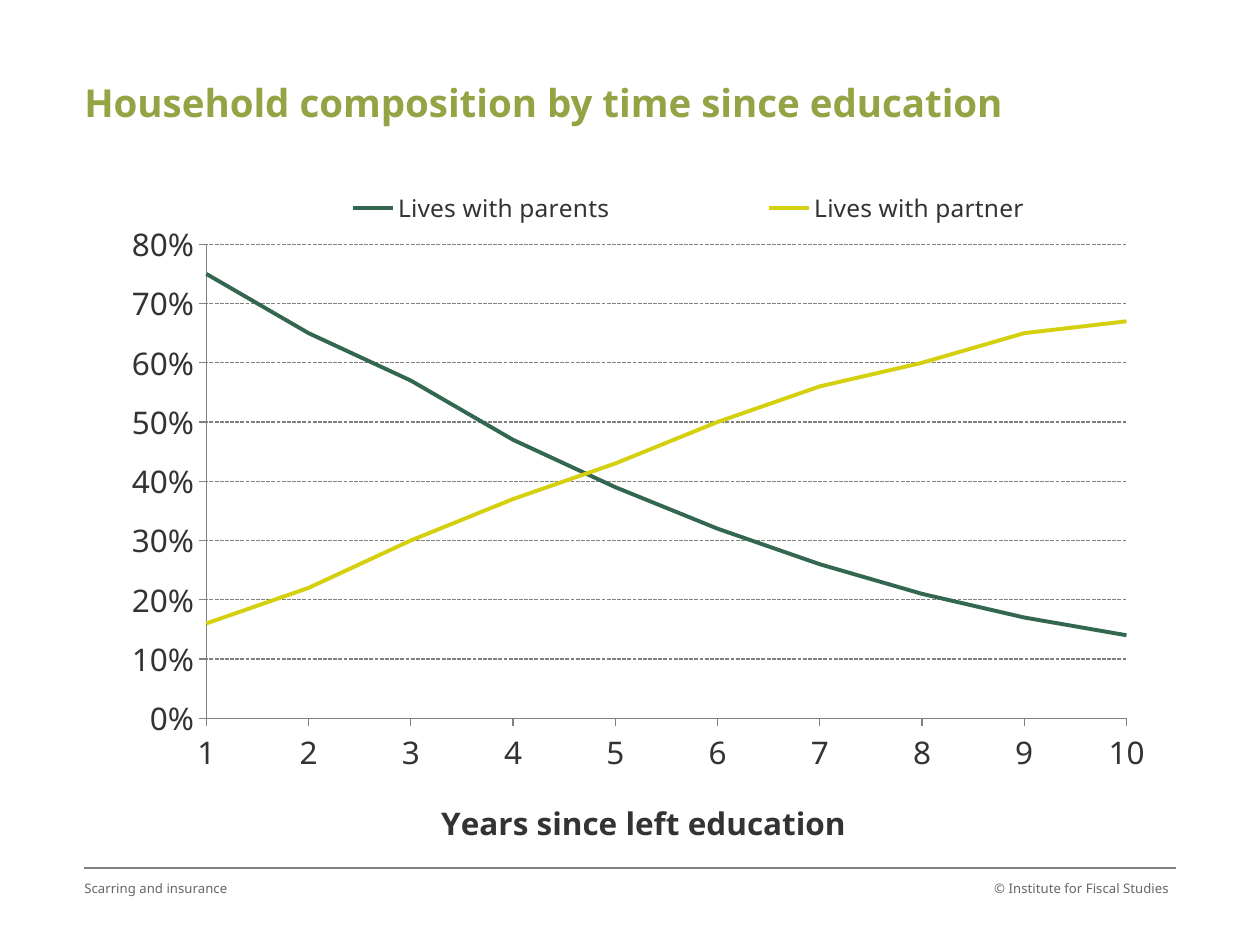
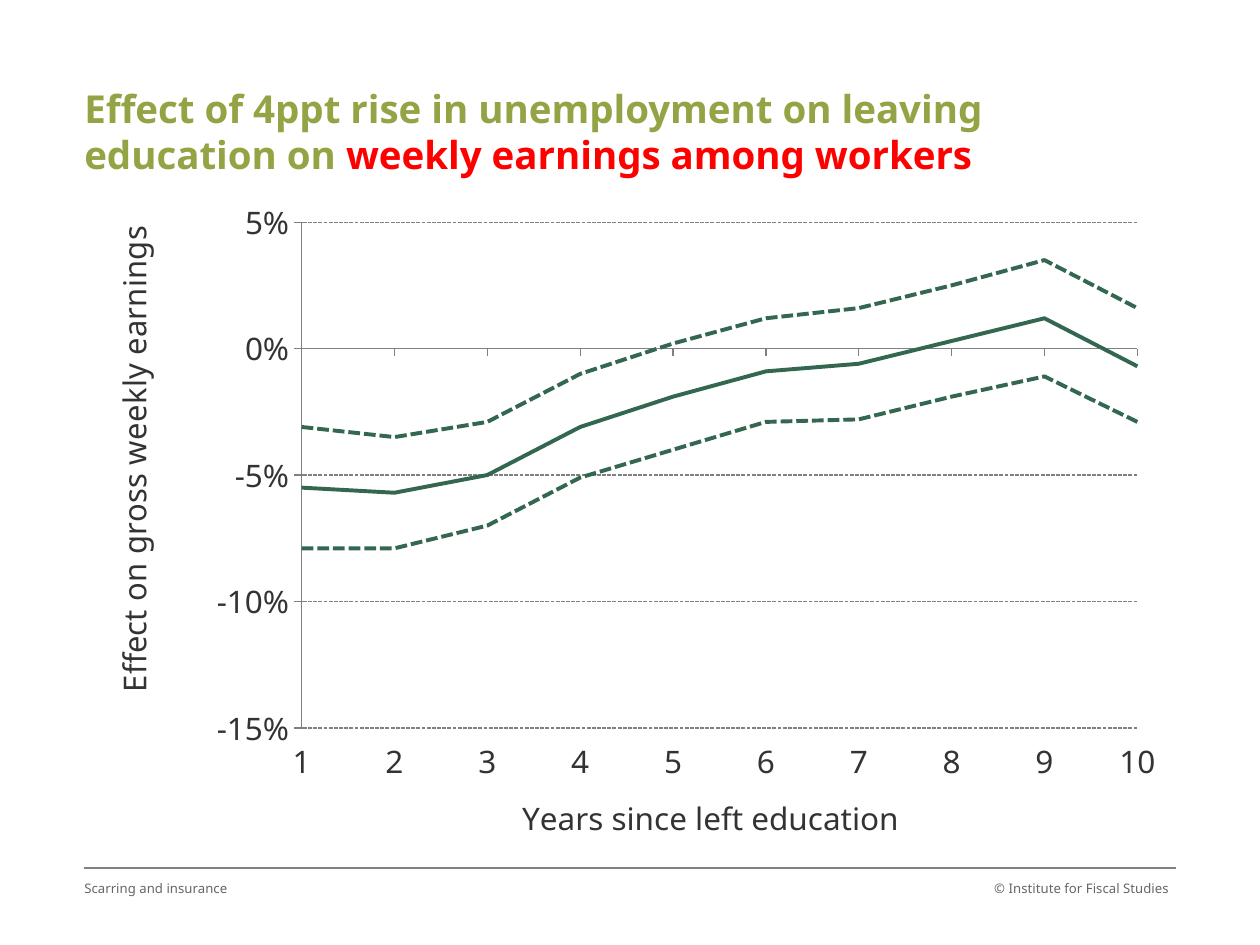
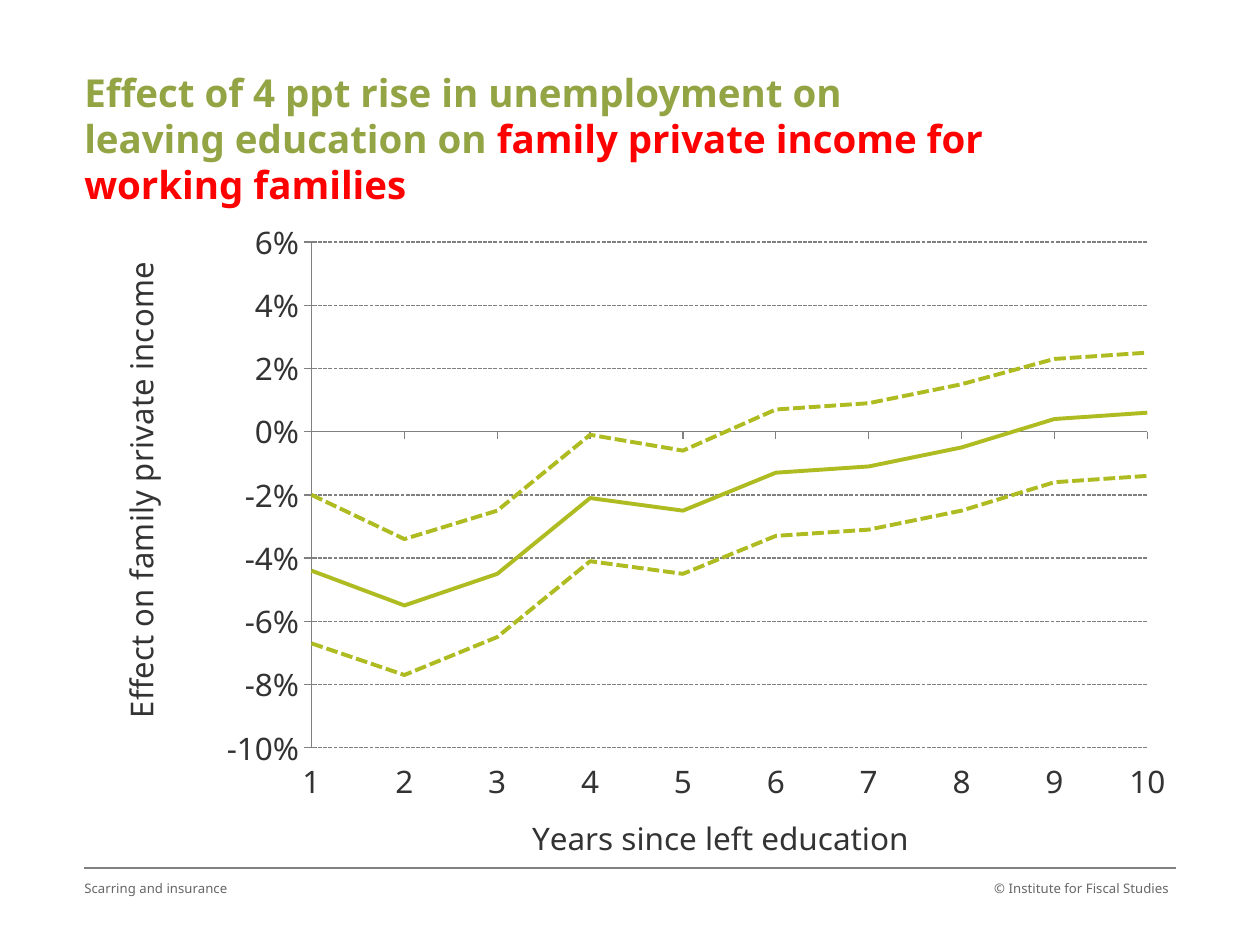
from dataclasses import dataclass
from typing import Optional

from lxml.etree import SubElement
from pptx import Presentation
from pptx.chart.data import CategoryChartData
from pptx.dml.color import RGBColor
from pptx.enum.chart import XL_CHART_TYPE as ChartType
from pptx.enum.chart import XL_LEGEND_POSITION as LegendPosition
from pptx.enum.chart import XL_TICK_LABEL_POSITION as LabelPosition
from pptx.enum.chart import XL_TICK_MARK as TickMark
from pptx.enum.dml import MSO_LINE_DASH_STYLE as Dash
from pptx.enum.shapes import MSO_CONNECTOR_TYPE as ConnectorType
from pptx.enum.text import PP_ALIGN as Align
from pptx.oxml import parse_xml
from pptx.oxml.ns import nsdecls, qn
from pptx.util import Cm, Pt

TITLE_GREEN = RGBColor(0x93, 0xA4, 0x45)
RED = RGBColor(0xFF, 0x00, 0x00)
FOOTER_GRAY = RGBColor(0x66, 0x66, 0x66)
LINE_GRAY = RGBColor(0x80, 0x80, 0x80)
TEXT_GRAY = RGBColor(0x33, 0x33, 0x33)
DARK_GREEN = RGBColor(0x33, 0x67, 0x50)
YELLOW = RGBColor(0xD4, 0xD0, 0x0E)
LIME = RGBColor(0xAF, 0xBC, 0x21)
FONT = "Noto Sans"
LEFT, RIGHT = 1.7, 23.7
YEARS = [str(year) for year in range(1, 11)]


@dataclass(frozen=True)
class Box:
    """A place in centimetres; a box without size only fixes its corner."""

    left: float
    top: float
    width: float = 0
    height: float = 0


@dataclass(frozen=True)
class Series:
    """One line of a chart, with its values in percent."""

    name: str
    color: RGBColor
    percents: list[float]
    dashed: bool = False


@dataclass(frozen=True)
class ChartSlide:
    """A slide with a title and one line chart; inner boxes are relative to the chart."""

    title: str
    title_box: Box
    chart_box: Box
    plot_box: Box
    years_title: Box
    series: list[Series]
    scale: tuple[float, float, float]
    highlight: str = ""
    value_title: str = ""
    value_title_box: Optional[Box] = None
    legend_box: Optional[Box] = None


def estimate_with_bounds(color: RGBColor, *rows: list[float]) -> list[Series]:
    """Return a solid central line followed by dashed bounds."""
    return [Series(f"Series {number}", color, row, number > 1)
            for number, row in enumerate(rows, 1)]


EFFECT_PLOT = Box(4.58, 1.17, 16.85, 10.37)
EFFECT_YEARS_TITLE = Box(8.91, 12.77)

SLIDES = [
    ChartSlide(
        title="Household composition by time since education",
        title_box=Box(LEFT, 1.52, 19, 1.12),
        chart_box=Box(LEFT, 3.53, 22, 13.69),
        plot_box=Box(2.46, 1.41, 18.55, 9.65),
        years_title=Box(7.08, 12.57),
        series=[
            Series("Lives with parents", DARK_GREEN, [75, 65, 57, 47, 39, 32, 26, 21, 17, 14]),
            Series("Lives with partner", YELLOW, [16, 22, 30, 37, 43, 50, 56, 60, 65, 67]),
        ],
        scale=(0, 80, 10),
        legend_box=Box(2.37, 0.2, 19.8, 0.95),
    ),
    ChartSlide(
        title="Effect of 4ppt rise in unemployment on leaving education on ",
        highlight="weekly earnings among workers",
        title_box=Box(LEFT, 1.65, 18.21, 1.12),
        chart_box=Box(1.5, 3.33, 22, 13.79),
        plot_box=EFFECT_PLOT,
        years_title=EFFECT_YEARS_TITLE,
        series=estimate_with_bounds(
            DARK_GREEN,
            [-5.5, -5.7, -5, -3.1, -1.9, -0.9, -0.6, 0.3, 1.2, -0.7],
            [-3.1, -3.5, -2.9, -1, 0.2, 1.2, 1.6, 2.5, 3.5, 1.6],
            [-7.9, -7.9, -7, -5.1, -4, -2.9, -2.8, -1.9, -1.1, -2.9],
        ),
        scale=(-15, 5, 5),
        value_title="Effect on gross weekly earnings",
        value_title_box=Box(0.57, 1.27),
    ),
    ChartSlide(
        title="Effect of 4 ppt rise in unemployment on leaving education on ",
        highlight="family private income for working families",
        title_box=Box(LEFT, 1.32, 18.21, 1.12),
        chart_box=Box(LEFT, 3.73, 22, 13.79),
        plot_box=EFFECT_PLOT,
        years_title=EFFECT_YEARS_TITLE,
        series=estimate_with_bounds(
            LIME,
            [-4.4, -5.5, -4.5, -2.1, -2.5, -1.3, -1.1, -0.5, 0.4, 0.6],
            [-2, -3.4, -2.5, -0.1, -0.6, 0.7, 0.9, 1.5, 2.3, 2.5],
            [-6.7, -7.7, -6.5, -4.1, -4.5, -3.3, -3.1, -2.5, -1.6, -1.4],
        ),
        scale=(-10, 6, 2),
        value_title="Effect on family private income",
        value_title_box=Box(0.51, 1.6),
    ),
]


def lengths(box: Box) -> tuple:
    """Return the box as left, top, width and height lengths."""
    return Cm(box.left), Cm(box.top), Cm(box.width), Cm(box.height)


def set_font(font, size: float, color: RGBColor, bold: bool = False) -> None:
    """Give a font the shared typeface with this size and colour."""
    font.name, font.size, font.bold = FONT, Pt(size), bold
    font.color.rgb = color


def add_text(slide, box: Box, text: str, *, size: float, color: RGBColor, bold: bool = False,
             highlight: str = "", align=Align.LEFT, line_spacing=None,
             top_inset: float = 0, right_inset: float = 0) -> None:
    """Add a one-paragraph text box, optionally ending in a red highlight."""
    frame = slide.shapes.add_textbox(*lengths(box)).text_frame
    frame.word_wrap = True
    frame.margin_left = frame.margin_bottom = 0
    frame.margin_top, frame.margin_right = Cm(top_inset), Cm(right_inset)
    paragraph = frame.paragraphs[0]
    paragraph.alignment, paragraph.line_spacing = align, line_spacing
    for words, run_color in ((text, color), (highlight, RED)):
        if words:
            run = paragraph.add_run()
            run.text = words
            set_font(run.font, size, run_color, bold)


def add_rule(slide) -> None:
    """Draw the line above the footer."""
    rule = slide.shapes.add_connector(
        ConnectorType.STRAIGHT, Cm(LEFT), Cm(17.5), Cm(RIGHT), Cm(17.5))
    rule.line.color.rgb = LINE_GRAY
    rule.line.width = Pt(0.75)
    SubElement(rule._element.spPr, qn("a:effectLst"))


def add_footer(slide) -> None:
    """Add both footer texts."""
    add_text(slide, Box(19.3, 17.75, 4.4, 1.02), "© Institute for Fiscal Studies",
             size=7.5, color=FOOTER_GRAY, align=Align.RIGHT, right_inset=0.14)
    add_text(slide, Box(LEFT, 17.75, 8.05, 1.02), "Scarring and insurance",
             size=7.5, color=FOOTER_GRAY)


def place(element, box: Box, chart_box: Box, position: int) -> None:
    """Fix a chart part by a manual layout, inserted at this child position."""
    for layout in element.findall(qn("c:layout")):
        element.remove(layout)
    layout = parse_xml(f"<c:layout {nsdecls('c')}/>")
    element.insert(position, layout)
    manual = SubElement(layout, qn("c:manualLayout"))
    settings = {"xMode": "edge", "yMode": "edge",
                "x": box.left / chart_box.width, "y": box.top / chart_box.height}
    if box.width:
        settings |= {"w": box.width / chart_box.width, "h": box.height / chart_box.height}
    if element.tag == qn("c:plotArea"):
        settings = {"layoutTarget": "inner"} | settings
    for name, value in settings.items():
        SubElement(manual, qn(f"c:{name}"), val=str(value))


def set_axis_title(axis, text: str, box: Box, chart_box: Box, bold: bool = False) -> None:
    """Write and place the title of an axis."""
    frame = axis.axis_title.text_frame
    frame.text = text
    set_font(frame.paragraphs[0].runs[0].font, 18, TEXT_GRAY, bold)
    place(axis._element.find(qn("c:title")), box, chart_box, 1)


def style_line(line, color: RGBColor, width: float, dashed: bool = False) -> None:
    """Set colour, width and dash of a chart line."""
    line.color.rgb = color
    line.width = Pt(width)
    if dashed:
        line.dash_style = Dash.SQUARE_DOT


def start_lines_on_axis(value_axis) -> None:
    """Let the first category sit on the value axis itself."""
    element = value_axis._element
    for crossing in element.findall(qn("c:crossBetween")):
        element.remove(crossing)
    crossing = parse_xml(f'<c:crossBetween {nsdecls("c")} val="midCat"/>')
    element.find(qn("c:majorUnit")).addprevious(crossing)


def style_axes(chart, content: ChartSlide) -> None:
    """Set scales, lines, labels and titles of both axes."""
    years, values = chart.category_axis, chart.value_axis
    for axis in (years, values):
        axis.major_tick_mark, axis.minor_tick_mark = TickMark.OUTSIDE, TickMark.NONE
        style_line(axis.format.line, LINE_GRAY, 0.75)
        set_font(axis.tick_labels.font, 18, TEXT_GRAY)
    values.minimum_scale, values.maximum_scale, values.major_unit = (
        percent / 100 for percent in content.scale)
    values.tick_labels.number_format = "0%"
    values.tick_labels.number_format_is_linked = False
    style_line(values.major_gridlines.format.line, LINE_GRAY, 0.75, dashed=True)
    start_lines_on_axis(values)
    years.tick_label_position = LabelPosition.LOW
    set_axis_title(years, "Years since left education", content.years_title,
                   content.chart_box, bold=not content.value_title)
    if content.value_title:
        set_axis_title(values, content.value_title, content.value_title_box, content.chart_box)


def add_line_chart(slide, content: ChartSlide) -> None:
    """Add the line chart of a slide."""
    data = CategoryChartData(number_format="0%")
    data.categories = YEARS
    for series in content.series:
        data.add_series(series.name, [round(percent / 100, 3) for percent in series.percents])
    chart = slide.shapes.add_chart(ChartType.LINE, *lengths(content.chart_box), data).chart
    set_font(chart.font, 18, TEXT_GRAY)
    chart.has_title = False
    chart.plots[0].vary_by_categories = False
    for drawn, series in zip(chart.plots[0].series, content.series):
        drawn.smooth = False
        style_line(drawn.format.line, series.color, 2.25, series.dashed)
    style_axes(chart, content)
    place(chart._chartSpace.chart.plotArea, content.plot_box, content.chart_box, 0)
    chart.has_legend = content.legend_box is not None
    if content.legend_box:
        chart.legend.position = LegendPosition.RIGHT
        chart.legend.include_in_layout = False
        set_font(chart.legend.font, 14, TEXT_GRAY)
        place(chart.legend._element, content.legend_box, content.chart_box, 1)


def main() -> None:
    """Build and save the presentation."""
    presentation = Presentation()
    presentation.slide_width, presentation.slide_height = Cm(25.4), Cm(19.05)
    for content in SLIDES:
        slide = presentation.slides.add_slide(presentation.slide_layouts[6])
        add_rule(slide)
        add_text(slide, content.title_box, content.title, highlight=content.highlight, size=22,
                 color=TITLE_GREEN, bold=True, line_spacing=Pt(26.4), top_inset=0.07)
        add_line_chart(slide, content)
        add_footer(slide)
    presentation.save("out.pptx")


if __name__ == "__main__":
    main()
